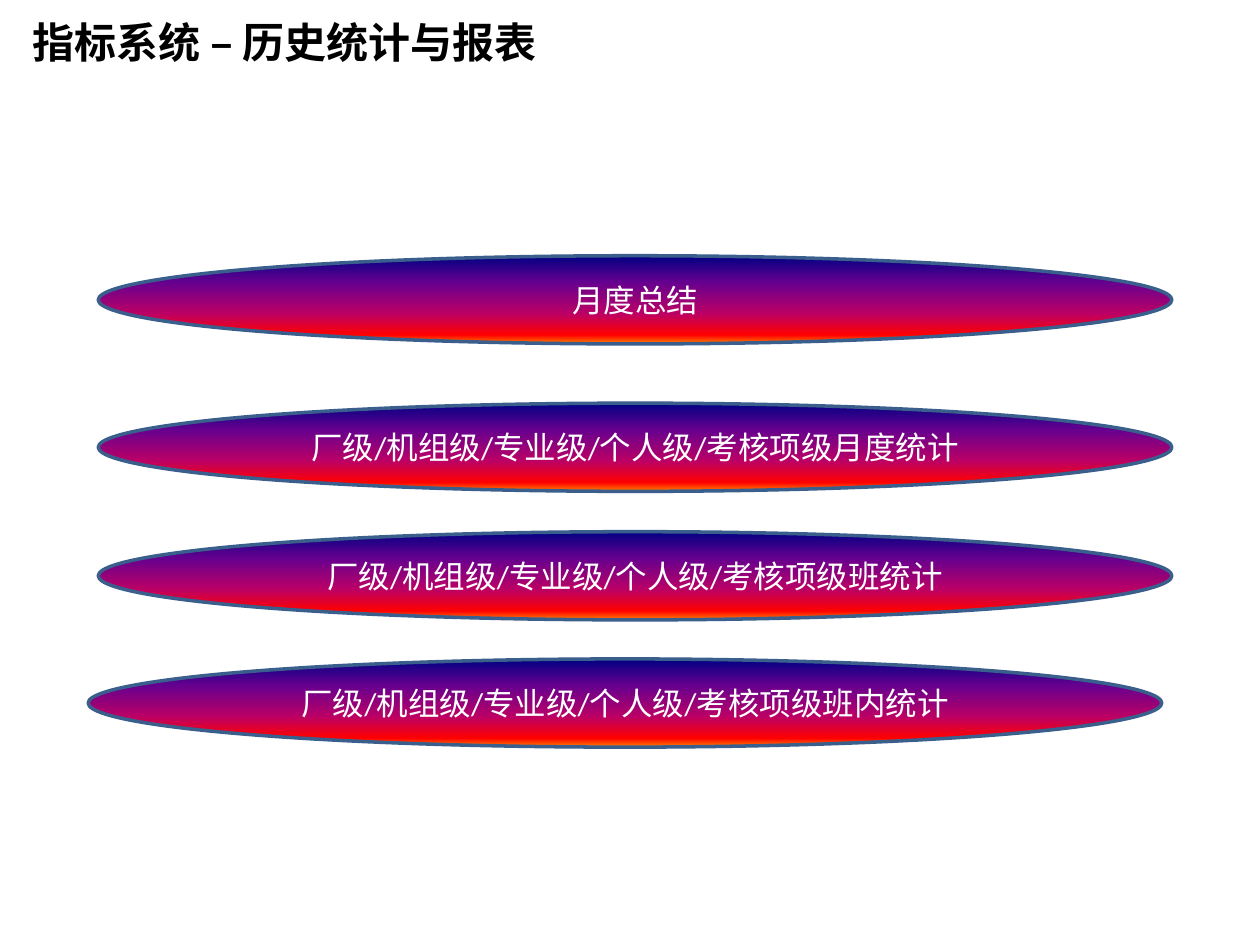
from lxml import etree
from pptx import Presentation
from pptx import util as u
from pptx.dml.color import RGBColor
from pptx.enum import shapes, text
from pptx.oxml.ns import qn

BLACK = RGBColor(0x00, 0x00, 0x00)
WHITE = RGBColor(0xFF, 0xFF, 0xFF)
OUTLINE = RGBColor(0x3A, 0x5F, 0x8C)
SUNSET = [
    (0, RGBColor(0x00, 0x00, 0x82)),
    (30, RGBColor(0x66, 0x00, 0x8F)),
    (65, RGBColor(0xBA, 0x00, 0x66)),
    (90, RGBColor(0xFF, 0x00, 0x00)),
    (100, RGBColor(0xFF, 0x82, 0x00)),
]

WIDTH, HEIGHT = 10, 7.5
LEVEL_WIDTH, LEVEL_HEIGHT = 8.52, 0.7
SCOPES = "厂级/机组级/专业级/个人级/考核项级"
# left, top, label
LEVELS = [
    (0.78, 2.03, "月度总结"),
    (0.78, 3.2, SCOPES + "月度统计"),
    (0.78, 4.22, SCOPES + "班统计"),
    (0.7, 5.23, SCOPES + "班内统计"),
]


def style_font(paragraph, name, size, color, bold=False):
    font = paragraph.font
    font.name, font.size, font.bold = name, u.Pt(size), bold
    font.color.rgb = color


def fill_sunset(shape):
    """Fill from top to bottom with all the SUNSET stops."""
    shape.fill.gradient()
    shape.fill.gradient_angle = 270
    stops = shape.element.spPr.find(qn("a:gradFill")).find(qn("a:gsLst"))
    for stop in list(stops):
        stops.remove(stop)
    for percent, color in SUNSET:
        stop = etree.SubElement(stops, qn("a:gs"), pos=str(percent * 1000))
        etree.SubElement(stop, qn("a:srgbClr"), val=str(color))


def add_title(slide, wording):
    box = slide.shapes.add_textbox(
        u.Inches(0.16), u.Inches(0.08), u.Inches(6.41), u.Inches(0.5))
    frame = box.text_frame
    frame.word_wrap = True
    frame.auto_size = text.MSO_AUTO_SIZE.SHAPE_TO_FIT_TEXT
    frame.text = wording
    style_font(frame.paragraphs[0], "Noto Sans CJK SC", 24, BLACK, bold=True)


def add_level(slide, left, top, label):
    level = slide.shapes.add_shape(
        shapes.MSO_SHAPE.OVAL, u.Inches(left), u.Inches(top),
        u.Inches(LEVEL_WIDTH), u.Inches(LEVEL_HEIGHT))
    level.shadow.inherit = False
    fill_sunset(level)
    level.line.color.rgb = OUTLINE
    level.line.width = u.Pt(2)
    frame = level.text_frame
    frame.vertical_anchor = text.MSO_ANCHOR.MIDDLE
    frame.text = label
    paragraph = frame.paragraphs[0]
    paragraph.alignment = text.PP_ALIGN.CENTER
    style_font(paragraph, "Calibri", 18, WHITE)


def main():
    deck = Presentation()
    deck.slide_width, deck.slide_height = u.Inches(WIDTH), u.Inches(HEIGHT)
    slide = deck.slides.add_slide(deck.slide_layouts[6])
    add_title(slide, "指标系统 – 历史统计与报表")
    for left, top, label in LEVELS:
        add_level(slide, left, top, label)
    deck.save("out.pptx")


if __name__ == "__main__":
    main()
